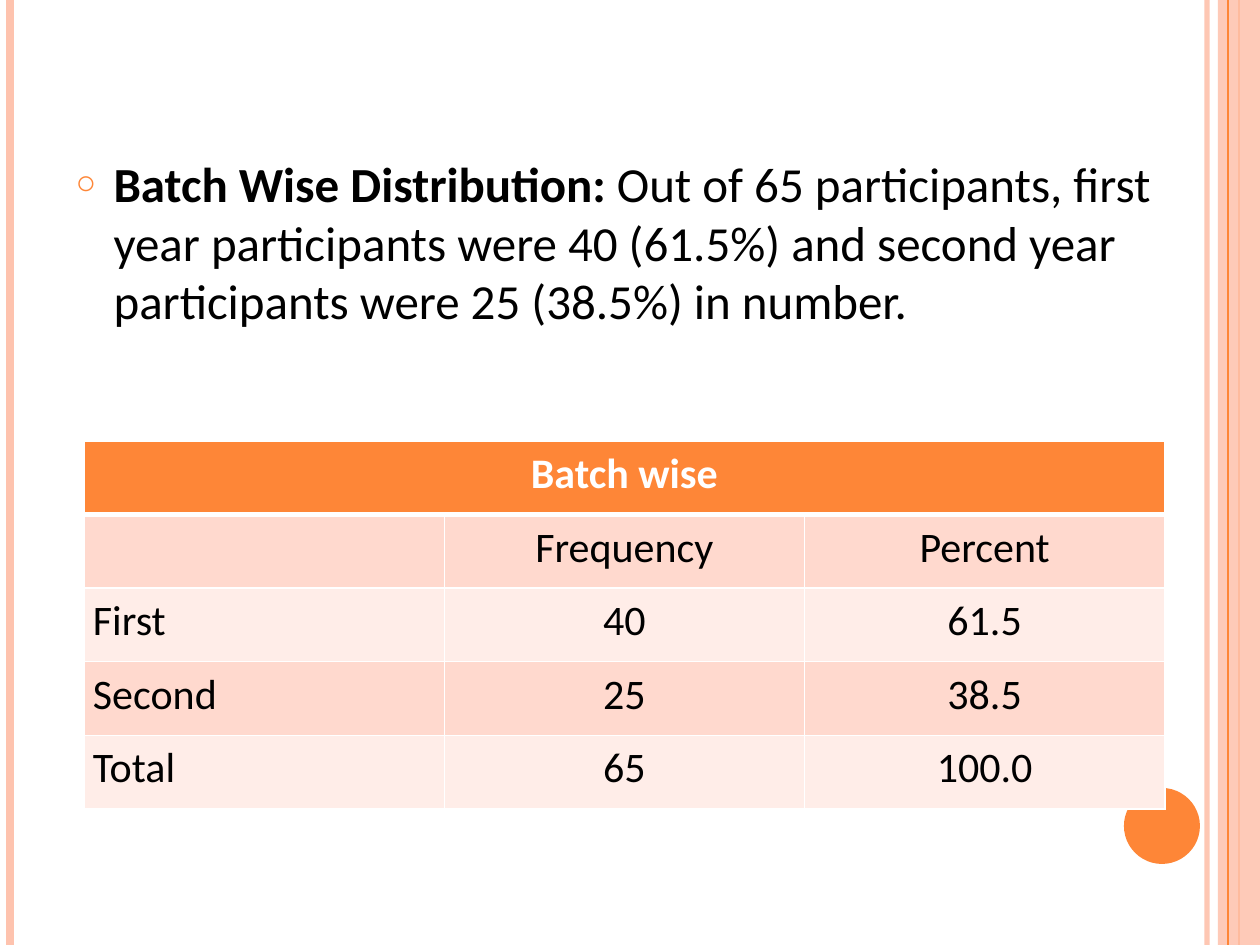
from lxml import etree
from pptx import Presentation
from pptx.dml.color import RGBColor
from pptx.enum.shapes import MSO_CONNECTOR, MSO_SHAPE
from pptx.enum.text import MSO_ANCHOR, MSO_AUTO_SIZE, PP_ALIGN
from pptx.oxml.ns import qn
from pptx.util import Pt

STRAIGHT = MSO_CONNECTOR.STRAIGHT
RECTANGLE, OVAL = MSO_SHAPE.RECTANGLE, MSO_SHAPE.OVAL
TOP, NO_FIT = MSO_ANCHOR.TOP, MSO_AUTO_SIZE.NONE
LEFT, CENTER = PP_ALIGN.LEFT, PP_ALIGN.CENTER

ORANGE = RGBColor(0xFE, 0x86, 0x37)
PEACH = RGBColor(0xFE, 0xC3, 0xAE)
BAND_DARK = RGBColor(0xFF, 0xD9, 0xCE)
BAND_LIGHT = RGBColor(0xFF, 0xED, 0xE8)
WHITE = RGBColor(0xFF, 0xFF, 0xFF)
BLACK = RGBColor(0, 0, 0)

FONT = "Calibri"
EMU_PER_PX = 914400 / 126
WIDTH, HEIGHT = 1260, 945


def px(length):
    return round(length * EMU_PER_PX)


def add_xml(parent, tag, **attributes):
    return etree.SubElement(parent, qn(tag), attributes)


class SlideBuilder:
    """Holds the style and the current slide and draws each kind of element."""

    def __init__(self, slide):
        self.slide = slide
        self.shapes = slide.shapes

    def set_alpha(self, element, percent):
        color = next(element.iter(qn("a:srgbClr")))
        add_xml(color, "a:alpha", val=str(percent * 1000))

    def style_span(self, span, size, color, bold=False):
        span.font.name = FONT
        span.font.size = Pt(size)
        span.font.bold = bold
        span.font.color.rgb = color

    def vertical_line(self, x, color, weight, opacity=100):
        line = self.shapes.add_connector(STRAIGHT, px(x), 0, px(x), px(HEIGHT))
        line.line.color.rgb = color
        line.line.width = Pt(weight)
        properties = line._element.spPr
        if opacity < 100:
            self.set_alpha(properties, opacity)
        add_xml(properties, "a:effectLst")

    def shape(self, kind, left, top, width, height, color, opacity=100):
        shape = self.shapes.add_shape(kind, px(left), px(top), px(width), px(height))
        shape.shadow.inherit = False
        shape.fill.solid()
        shape.fill.fore_color.rgb = color
        shape.line.fill.background()
        if opacity < 100:
            self.set_alpha(shape._element.spPr, opacity)

    def body(self, left, top, width, height, heading, text):
        box = self.slide.placeholders[1]
        box.left, box.top, box.width, box.height = map(px, (left, top, width, height))
        self.shapes._spTree.append(box._element)
        box.text_frame.auto_size = NO_FIT
        para = box.text_frame.paragraphs[0]
        para.space_before = Pt(6)
        for words, bold in ((heading, True), (text, False)):
            span = para.add_run()
            span.text = words
            self.style_span(span, 28, BLACK, bold)
        properties = para._p.get_or_add_pPr()
        properties.set("marL", str(px(38)))
        properties.set("indent", str(px(-38)))
        bullet_color = add_xml(properties, "a:buClr")
        add_xml(bullet_color, "a:srgbClr", val=str(ORANGE))
        add_xml(properties, "a:buSzPct", val="70000")
        add_xml(properties, "a:buChar", char="○")

    def borders(self, cell, top, bottom):
        properties = cell._tc.get_or_add_tcPr()
        for side, weight in (("L", 1), ("R", 1), ("T", top), ("B", bottom)):
            line = add_xml(properties, f"a:ln{side}", w=str(Pt(weight)))
            fill = add_xml(line, "a:solidFill")
            add_xml(fill, "a:srgbClr", val=str(WHITE))

    def cell(self, cell, text, row, align):
        header = row == 0
        self.borders(cell, 3 if row == 1 else 1, 3 if header else 1)
        cell.fill.solid()
        cell.fill.fore_color.rgb = ORANGE if header else (BAND_LIGHT, BAND_DARK)[row % 2]
        cell.margin_left = cell.margin_right = px(9)
        cell.margin_top = cell.margin_bottom = 0
        cell.vertical_anchor = TOP
        if text:
            cell.text_frame.text = text
            para = cell.text_frame.paragraphs[0]
            para.alignment = align
            para.line_spacing = 1.15
            self.style_span(para.runs[0], 24, WHITE if header else BLACK, header)

    def table(self, left, top, width, height, rows):
        table = self.shapes.add_table(
            len(rows), len(rows[0]), px(left), px(top), px(width), px(height)
        ).table
        table.cell(0, 0).merge(table.cell(0, len(rows[0]) - 1))
        for row, texts in enumerate(rows):
            for column, text in enumerate(texts):
                align = LEFT if row and column == 0 else CENTER
                self.cell(table.cell(row, column), text, row, align)


def main():
    deck = Presentation()
    deck.slide_width, deck.slide_height = px(WIDTH), px(HEIGHT)
    slide = deck.slides.add_slide(deck.slide_layouts[1])
    title = slide.shapes.title._element
    title.getparent().remove(title)

    builder = SlideBuilder(slide)
    builder.vertical_line(1207, PEACH, 3, 93)
    builder.vertical_line(10, PEACH, 4.5)
    builder.vertical_line(1239, ORANGE, 1.5)
    builder.shape(RECTANGLE, 1218, 0, 42, HEIGHT, PEACH, 87)
    builder.vertical_line(1228, ORANGE, 0.75)
    builder.shape(OVAL, 1124, 788, 76, 76, ORANGE)
    builder.body(
        63, 147, 1134, 745,
        "Batch Wise Distribution:",
        " Out of 65 participants, first year participants were 40 (61.5%) "
        "and second year participants were 25 (38.5%) in number.",
    )
    builder.table(84, 441, 1081, 368, [
        ("Batch wise", "", ""),
        ("", "Frequency", "Percent"),
        ("First", "40", "61.5"),
        ("Second", "25", "38.5"),
        ("Total", "65", "100.0"),
    ])
    deck.save("out.pptx")


if __name__ == "__main__":
    main()
